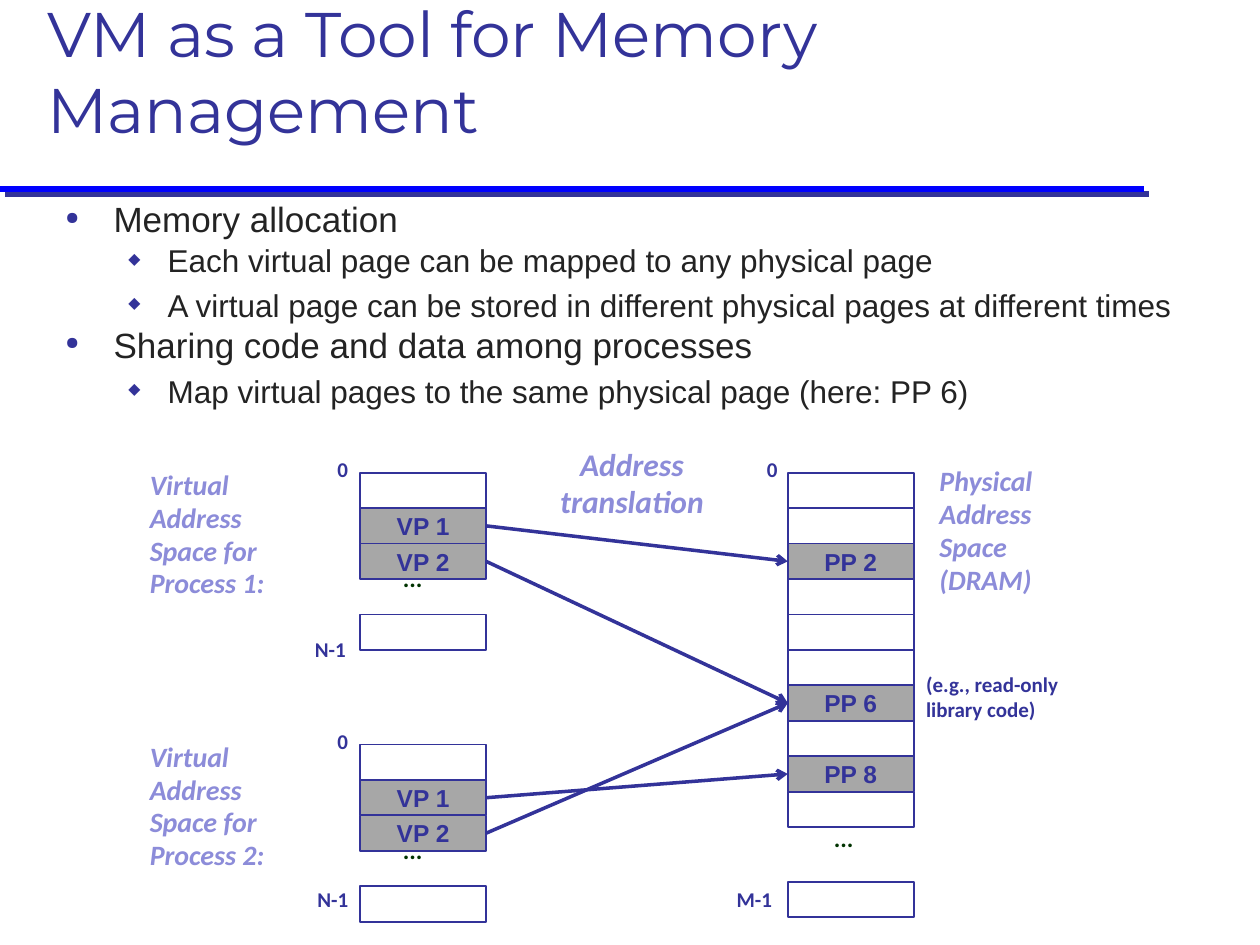
from lxml.etree import SubElement
from pptx import Presentation
from pptx.dml.color import RGBColor
from pptx.enum.shapes import MSO_CONNECTOR, MSO_SHAPE
from pptx.enum.text import MSO_ANCHOR, PP_ALIGN
from pptx.oxml.ns import qn
from pptx.util import Cm, Pt

COLORS = {"navy": "333399", "lilac": "8C8CD9", "gray": "A7A7A7",
          "blue": "0000FF", "body": "232323", "green": "003300"}
CELL_W, CELL_H = 2.54, 6.43 / 9
VIRTUAL_X, PHYSICAL_X = 7.26, 15.88
RIGHT, LEFT = 3, 1  # connection sites


def rgb(name):
    return RGBColor.from_string(COLORS[name])


def add_child(parent, tag, **attrs):
    return SubElement(parent, qn(tag), {k: str(v) for k, v in attrs.items()})


def write(p, text, size=12, color="navy", font="Calibri", bold=True,
          italic=False, align=None, spacing=None, before=None):
    r = p.add_run()
    r.text = text
    f = r.font
    f.size, f.name, f.bold, f.italic = Pt(size), font, bold, italic
    f.color.rgb = rgb(color)
    p.alignment, p.line_spacing = align, spacing
    if before is not None:
        p.space_before = Pt(before)


class Diagram:
    """Style and current slide, with a method for each kind of element."""

    def __init__(self, slide):
        self.shapes = slide.shapes

    def text(self, x, y, w, h, lines, wrap=True, anchor=MSO_ANCHOR.TOP, **fmt):
        tf = self.shapes.add_textbox(Cm(x), Cm(y), Cm(w), Cm(h)).text_frame
        tf.word_wrap, tf.vertical_anchor = wrap, anchor
        for i, line in enumerate(lines):
            p = tf.add_paragraph() if i else tf.paragraphs[0]
            write(p, line, **fmt)
        return tf

    def label(self, x, y, text, w=1.14):
        self.text(x, y, w, 0.76, [text], wrap=False, spacing=0.98)

    def heading(self, x, y, w, lines):
        self.text(x, y, w, 2.92, lines, size=16, color="lilac",
                  italic=True, spacing=0.98)

    def ellipsis(self, x, y):
        self.text(x, y, 0.91, 0.79, ["..."], wrap=False, size=14,
                  color="green", spacing=0.88, before=9)

    def bullets(self, x, y, w, h, items):
        """Items are (level, line spacing, text)."""
        tf = self.text(x, y, w, h, [])
        for i, (level, spacing, text) in enumerate(items):
            p = tf.add_paragraph() if i else tf.paragraphs[0]
            p.level = level
            write(p, text, size=18 if level else 20, color="body",
                  font="Arial", bold=False, spacing=spacing)
            pPr = p._p.get_or_add_pPr()
            margin, hang = (2.06, 0.79) if level else (0.97, 0.97)
            pPr.set("marL", str(Cm(margin)))
            pPr.set("indent", str(-Cm(hang)))
            add_child(add_child(pPr, "a:spcBef"), "a:spcPct", val=20000)
            add_child(add_child(pPr, "a:buClr"), "a:srgbClr", val=COLORS["navy"])
            add_child(pPr, "a:buSzPct", val=50000)
            add_child(pPr, "a:buChar", char="◆" if level else "●")

    def cell(self, x, y, text=None):
        sp = self.shapes.add_shape(MSO_SHAPE.RECTANGLE, Cm(x), Cm(y),
                                   Cm(CELL_W), Cm(CELL_H))
        sp.shadow.inherit = False
        sp.line.color.rgb, sp.line.width = rgb("navy"), Pt(1)
        if text:
            sp.fill.solid()
            sp.fill.fore_color.rgb = rgb("gray")
            sp.text_frame.vertical_anchor = MSO_ANCHOR.MIDDLE
            write(sp.text_frame.paragraphs[0], text, size=14, font="Arial",
                  align=PP_ALIGN.CENTER)
        else:
            sp.fill.background()
        return sp

    def column(self, x, y, names):
        """Stack cells downwards; a name fills its cell. Return them all."""
        return [self.cell(x, y + i * CELL_H, name) for i, name in enumerate(names)]

    def line(self, x1, y1, x2, y2, color, width):
        """Add a straight line; return it with its empty effect list."""
        ln = self.shapes.add_connector(MSO_CONNECTOR.STRAIGHT,
                                       Cm(x1), Cm(y1), Cm(x2), Cm(y2))
        ln.line.color.rgb, ln.line.width = rgb(color), Pt(width)
        return ln, add_child(ln._element.spPr, "a:effectLst")

    def arrow(self, source, target):
        ln, _ = self.line(0, 0, 1, 1, "navy", 2)
        ln.begin_connect(source, RIGHT)
        ln.end_connect(target, LEFT)
        add_child(ln.line._get_or_add_ln(), "a:tailEnd", type="arrow")

    def header(self, title):
        _, effects = self.line(0, 3.81, 23.06, 3.81, "blue", 3.5)
        shadow = add_child(effects, "a:outerShdw", dist=Pt(4.2), dir=45 * 60000,
                           algn="ctr", rotWithShape=0)
        add_child(shadow, "a:srgbClr", val=COLORS["navy"])
        self.text(0.71, 1.47, 23.93, 1.6, [title], anchor=MSO_ANCHOR.BOTTOM,
                  size=36, font="Montserrat", bold=False)

    def virtual_space(self, number, y, last_label):
        """Draw one process's address space; return its two mapped pages."""
        self.heading(2.77, y - 0.2, 3.81,
                     [f"Virtual Address Space for Process {number}:"])
        self.label(6.55, y - 0.42, "0", w=0.71)
        self.label(*last_label, "N-1")
        _, vp1, vp2 = self.column(VIRTUAL_X, y, [None, "VP 1", "VP 2"])
        self.cell(VIRTUAL_X, y + 4 * CELL_H)
        self.ellipsis(7.87, y + 1.78)
        return vp1, vp2

    def physical_space(self, y):
        """Draw physical memory; return its cells by page number."""
        self.heading(18.69, y - 0.28, 2.97, ["Physical", "Address", "Space (DRAM)"])
        self.label(15.21, y - 0.42, "0", w=0.71)
        self.label(14.6, 17.78, "M-1", w=1.22)
        used = (2, 6, 8)
        pages = self.column(PHYSICAL_X, y,
                            [f"PP {i}" if i in used else None for i in range(10)])
        self.cell(PHYSICAL_X, 17.78)
        self.ellipsis(16.56, 16.54)
        self.text(18.42, 13.44, 4.04, 1.24, ["(e.g., read-only", "library code)"],
                  spacing=0.98)
        return pages


def main():
    prs = Presentation()
    prs.slide_width, prs.slide_height = Cm(25.4), Cm(19.05)
    s = Diagram(prs.slides.add_slide(prs.slide_layouts[6]))

    s.header("VM as a Tool for Memory Management")
    s.bullets(1.07, 4.01, 24.33, 5.28, [
        (0, 0.83, "Memory allocation"),
        (1, 0.88, "Each virtual page can be mapped to any physical page"),
        (1, None, "A virtual page can be stored in different physical pages "
                  "at different times"),
        (0, 0.83, "Sharing code and data among processes"),
        (1, None, "Map virtual pages to the same physical page (here: PP 6)"),
    ])

    first = s.virtual_space(1, 9.53, (6.1, 12.73))
    second = s.virtual_space(2, 15.01, (6.15, 17.78))
    pages = s.physical_space(9.53)
    for source, page in zip(first + second, (2, 6, 8, 6)):
        s.arrow(source, pages[page])
    s.text(11, 8.84, 3.48, 1.8, ["Address", "translation"], wrap=False, size=18,
           color="lilac", italic=True, align=PP_ALIGN.CENTER)

    prs.save("out.pptx")


if __name__ == "__main__":
    main()
